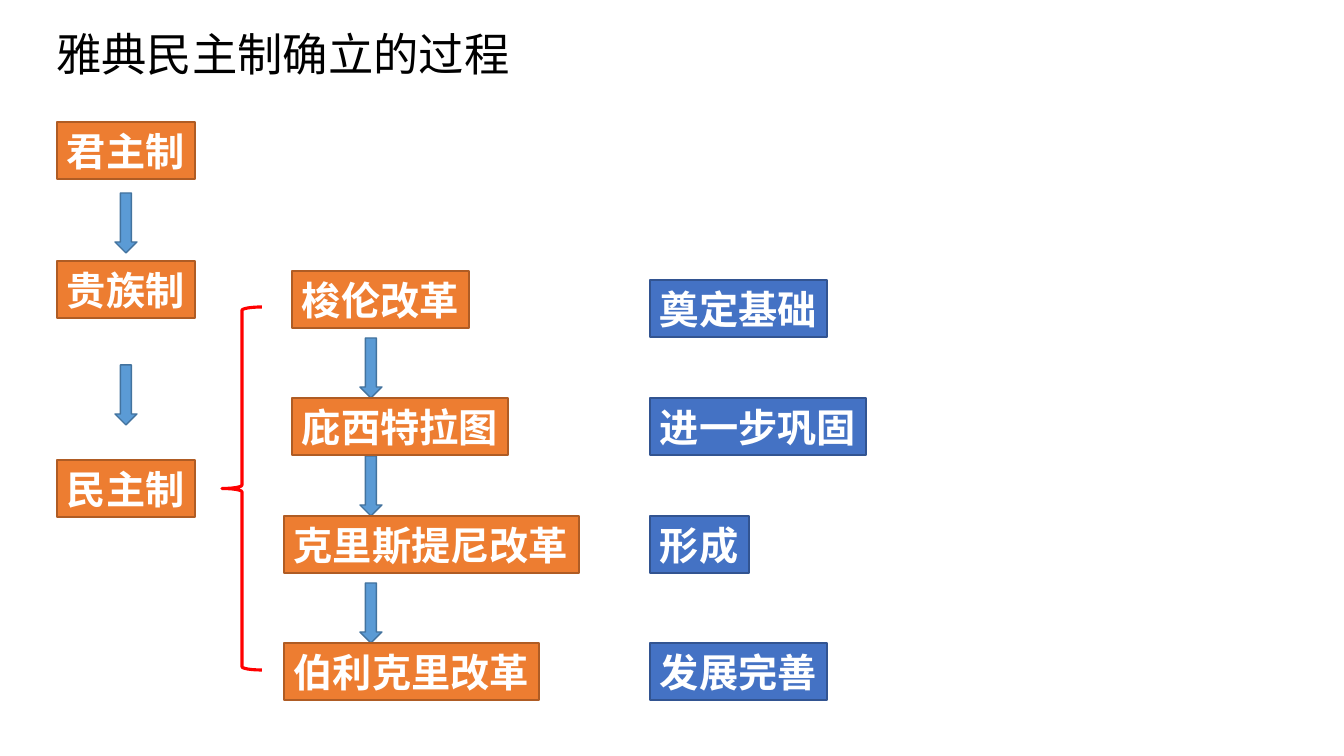
from dataclasses import dataclass

from lxml.etree import SubElement
from pptx import Presentation
from pptx.dml.color import RGBColor
from pptx.enum.lang import MSO_LANGUAGE_ID
from pptx.enum.shapes import MSO_SHAPE
from pptx.enum.text import MSO_ANCHOR, MSO_AUTO_SIZE, PP_ALIGN
from pptx.oxml.ns import qn
from pptx.util import Emu, Pt

SCALE = 914400 / 100.8
HIGH = 57
ORANGE = ("ED7D31", "AF5C24")
BLUE = ("4472C4", "325491")
SKY = ("5B9BD5", "43739E")


@dataclass
class Box:
    text: str
    left: int
    top: int
    tint: tuple[str, str] = ORANGE

    @property
    def width(self) -> int:
        # Side insets plus one 28 pt square per character
        return round(20.2 + 39.2 * len(self.text))


@dataclass
class Arrow:
    left: int
    top: int


BOXES = [
    # Forms of rule
    Box("君主制", 57, 122),
    Box("贵族制", 57, 261),
    Box("民主制", 57, 460),
    # Reforms
    Box("梭伦改革", 292, 271),
    Box("庇西特拉图", 292, 398),
    Box("克里斯提尼改革", 284, 516),
    Box("伯利克里改革", 284, 643),
    # Effects
    Box("奠定基础", 650, 280, BLUE),
    Box("进一步巩固", 650, 398, BLUE),
    Box("形成", 650, 516, BLUE),
    Box("发展完善", 650, 643, BLUE),
]
ARROWS = [Arrow(115, 193), Arrow(115, 365),
          Arrow(360, 338), Arrow(360, 456), Arrow(360, 583)]


def px(count: int) -> Emu:
    return Emu(round(count * SCALE))


def color(code: str) -> RGBColor:
    return RGBColor.from_string(code)


def write(shape, text: str, *, size: float, font: str, ink: str,
          bold: bool = False, space: float = 1.0, wrap: bool = True,
          fit=MSO_AUTO_SIZE.NONE) -> None:
    frame = shape.text_frame
    frame.word_wrap = wrap
    frame.auto_size = fit
    frame.vertical_anchor = MSO_ANCHOR.MIDDLE
    para = frame.paragraphs[0]
    para.alignment = PP_ALIGN.LEFT
    para.line_spacing = space
    run = para.add_run()
    run.text = text
    face = run.font
    face.size, face.bold, face.name = Pt(size), bold, font
    face.color.rgb = color(ink)
    face.language_id = MSO_LANGUAGE_ID.SIMPLIFIED_CHINESE
    # East Asian typeface
    SubElement(run._r.rPr, qn("a:ea")).set("typeface", font)


def draw(slide, kind, left: int, top: int, width: int, height: int,
         line: str, fill: str | None = None, weight: float = 1):
    shape = slide.shapes.add_shape(
        kind, px(left), px(top), px(width), px(height))
    shape.shadow.inherit = False
    if fill:
        shape.fill.solid()
        shape.fill.fore_color.rgb = color(fill)
    else:
        shape.fill.background()
    shape.line.color.rgb = color(line)
    shape.line.width = Pt(weight)
    return shape


def main() -> None:
    deck = Presentation()
    deck.slide_width, deck.slide_height = px(1344), px(756)
    slide = deck.slides.add_slide(deck.slide_layouts[5])

    # Title
    title = slide.shapes.title
    title.left, title.top = px(46), px(31)
    title.width, title.height = px(1159), px(52)
    write(title, "雅典民主制确立的过程", size=32.4,
          font="Noto Sans CJK SC", ink="000000", space=0.9)

    # Arrows
    for arrow in ARROWS:
        fill, line = SKY
        draw(slide, MSO_SHAPE.DOWN_ARROW, arrow.left, arrow.top,
             22, 60, line, fill)

    # Brace around the reforms
    draw(slide, MSO_SHAPE.LEFT_BRACE, 222, 307, 40, 363, "FF0000",
         weight=2.25)

    # Labelled boxes
    for box in BOXES:
        fill, line = box.tint
        shape = draw(slide, MSO_SHAPE.RECTANGLE, box.left, box.top,
                     box.width, HIGH, line, fill)
        write(shape, box.text, size=28, font="Calibri", ink="FFFFFF",
              bold=True, wrap=False, fit=MSO_AUTO_SIZE.SHAPE_TO_FIT_TEXT)

    deck.save("out.pptx")


if __name__ == "__main__":
    main()
